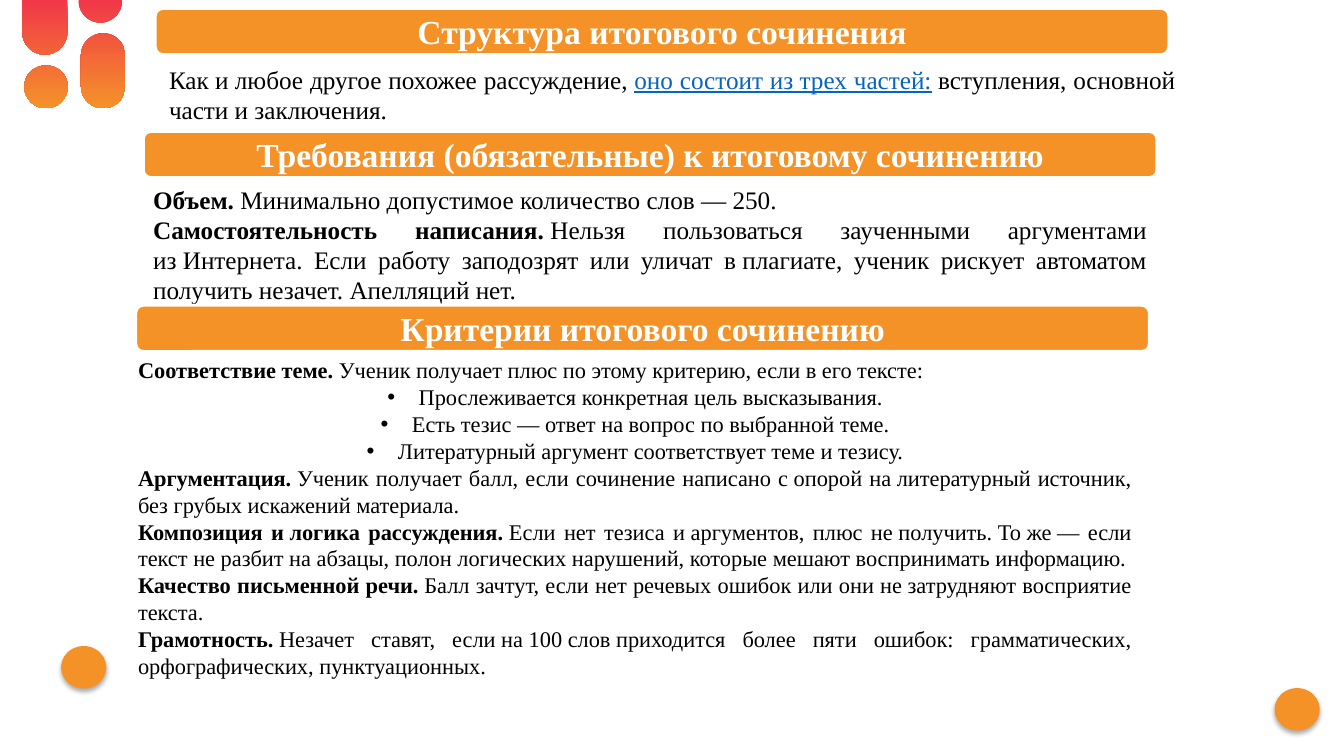
from lxml.etree import SubElement as Sub
from pptx import Presentation
from pptx.dml.color import RGBColor as Rgb
from pptx.enum.shapes import MSO_SHAPE as Kind
from pptx.enum.text import MSO_ANCHOR as Anchor, MSO_AUTO_SIZE as Auto, PP_ALIGN as Align
from pptx.oxml.ns import qn
from pptx.util import Cm, Pt

# Content: "~" ties two words with a no-break space
# Paragraphs are (layout, runs); runs are (look, text)
INTRO = [("body", [
    ("plain", "Как~и~любое другое похожее рассуждение,~"),
    ("link", "оно состоит из~трех частей:"),
    ("plain", "~вступления, основной части и~заключения."),
])]
RULES = [
    ("body", [("bold", "Объем."),
              ("plain", "~Минимально допустимое количество слов~— 250.")]),
    ("body", [("bold", "Самостоятельность написания."),
              ("plain", "~Нельзя пользоваться заученными аргументами из~Интернета. "
                        "Если работу заподозрят или уличат в~плагиате, ученик рискует "
                        "автоматом получить незачет. Апелляций нет.")]),
]
MARKS = [
    ("body", [("bold", "Соответствие теме."),
              ("plain", "~Ученик получает плюс по~этому критерию, если в~его тексте:")]),
    ("item", [("plain", "Прослеживается конкретная цель высказывания.")]),
    ("item", [("plain", "Есть тезис~— ответ на~вопрос по~выбранной теме.")]),
    ("item", [("plain", "Литературный аргумент соответствует теме и~тезису.")]),
    ("body", [("bold", "Аргументация."),
              ("plain", "~Ученик получает балл, если сочинение написано с~опорой "
                        "на~литературный источник, без~грубых искажений материала. ")]),
    ("body", [("bold", "Композиция и~логика рассуждения."),
              ("plain", "~Если нет тезиса и~аргументов, плюс не~получить.~То~же~— если "
                        "текст не~разбит на~абзацы, полон логических нарушений, "
                        "которые мешают воспринимать информацию.")]),
    ("body", [("bold", "Качество письменной речи."),
              ("plain", "~Балл зачтут, если нет речевых ошибок или они "
                        "не~затрудняют восприятие текста. ")]),
    ("body", [("bold", "Грамотность."),
              ("plain", "~Незачет ставят, если~на~100~слов~приходится более пяти ошибок: "
                        "грамматических, орфографических, пунктуационных. ")]),
]

# Text boxes: (left, top, width, height, size, paragraphs)
# Heading bars: (left, top, text)
PARTS = [
    (4.01, 1.49, 25.86, 1.8, 18, INTRO),
    (3.91, 0.21, "Структура итогового сочинения"),
    (3.61, 3.31, "Требования (обязательные) к итоговому сочинению"),
    (3.61, 4.51, 25.55, 3.33, 18, RULES),
    (3.42, 7.69, "Критерии итогового сочинению"),
    (3.23, 8.86, 25.55, 8.46, 16, MARKS),
]

# Pills: (left, top, width, bottom, round top)
PILLS = [
    (0.61, 1.65, 1.1, 2.73, True),
    (2.04, 0.84, 1.12, 2.73, True),
    (1.98, 0, 1.1, 0.57, False),
    (0.56, 0, 1.14, 1.38, False),
]
DOTS = [(32.12, 17.34), (1.54, 16.28)]

HUES = {"bar": "F49228", "top": "F13749", "text": "000000",
        "link": "0563C1", "pale": "FFFFFF"}
FACE = "Times New Roman"
LOOKS = {
    "plain": ("text", {"bold": False}),
    "bold": ("text", {"bold": True}),
    "link": ("link", {"bold": False, "underline": True}),
    "head": ("pale", {"bold": True}),
}
BEND = 0.55


def hue(name):
    return Rgb.from_string(HUES[name])


def put(target, values):
    for key, value in values.items():
        setattr(target, key, value)


def write(para, runs, size):
    for look, text in runs:
        run = para.add_run()
        run.text = text.replace("~", chr(160))
        tint, style = LOOKS[look]
        put(run.font, {"name": FACE, "size": Pt(size), **style})
        run.font.color.rgb = hue(tint)


def bullet(para):
    props = para._p.get_or_add_pPr()
    props.set("marL", str(Cm(0.79)))
    props.set("indent", str(-Cm(0.79)))
    Sub(props, qn("a:buFont"), typeface="Arial")
    Sub(props, qn("a:buChar"), char="•")


def outline(left, top, wide, base, round_top):
    """Start point and steps: one point is a line, three are a curve."""
    rad = wide / 2
    mid, right = left + rad, left + wide
    pull = rad * BEND
    low = max(base - rad, top)
    drop = (base - low) * BEND
    high = min(top + rad, low) if round_top else top
    rise = (high - top) * BEND
    crown = [
        [(left, high - rise), (mid - pull, top), (mid, top)],
        [(mid + pull, top), (right, high - rise), (right, high)],
    ] if round_top else [[(right, top)]]
    return (left, high), crown + [
        [(right, low)],
        [(right, low + drop), (mid + pull, base), (mid, base)],
        [(mid - pull, base), (left, low + drop), (left, low)],
    ]


def spots(points):
    return [(Cm(x), Cm(y)) for x, y in points]


def bend(shape, steps):
    """Join the three lines of each curved step into one curve."""
    lines = iter(list(shape._element.iter(qn("a:lnTo"))))
    for step in steps:
        first, *rest = [next(lines) for _ in step]
        if rest:
            first.tag = qn("a:cubicBezTo")
            for line in rest:
                first.append(line[0])
                line.getparent().remove(line)


def add_bar(left, top, text):
    bar = shapes.add_shape(Kind.ROUNDED_RECTANGLE, Cm(left), Cm(top), Cm(25.55), Cm(1.17))
    bar.shadow.inherit = False
    bar.fill.solid()
    bar.fill.fore_color.rgb = hue("bar")
    bar.line.color.rgb = hue("pale")
    bar.line.width = Pt(2.25)
    put(bar.text_frame, {"word_wrap": True, "vertical_anchor": Anchor.MIDDLE})
    para = bar.text_frame.paragraphs[0]
    para.alignment = Align.CENTER
    write(para, [("head", text)], 24)


def add_box(left, top, wide, high, size, paras):
    frame = shapes.add_textbox(Cm(left), Cm(top), Cm(wide), Cm(high)).text_frame
    put(frame, {"word_wrap": True, "auto_size": Auto.SHAPE_TO_FIT_TEXT})
    for index, (layout, runs) in enumerate(paras):
        para = frame.add_paragraph() if index else frame.paragraphs[0]
        para.alignment = Align.CENTER if layout == "item" else Align.JUSTIFY
        if layout == "item":
            bullet(para)
        write(para, runs, size)


deck = Presentation()
put(deck, {"slide_width": Cm(33.87), "slide_height": Cm(19.05)})
shapes = deck.slides.add_slide(deck.slide_layouts[6]).shapes

# Corner pills, one outline under one gradient
loops = [outline(*pill) for pill in PILLS]
pen = shapes.build_freeform(*spots([loops[0][0]])[0])
for index, (start, steps) in enumerate(loops):
    if index:
        pen.move_to(*spots([start])[0])
    pen.add_line_segments(spots(sum(steps, [])), close=True)
corner = pen.convert_to_shape()
bend(corner, [step for _, steps in loops for step in steps])
corner.shadow.inherit = False
corner.line.fill.background()
corner.fill.gradient()
corner.fill.gradient_angle = 270
for stop, name, spot in zip(corner.fill.gradient_stops, ("top", "bar"), (0, 1)):
    stop.color.rgb = hue(name)
    stop.position = spot

# Dots with a soft shadow
for left, top in DOTS:
    dot = shapes.add_shape(Kind.OVAL, Cm(left), Cm(top), Cm(1.14), Cm(1.07))
    dot.fill.solid()
    dot.fill.fore_color.rgb = hue("bar")
    dot.line.fill.background()
    dot.shadow.inherit = False
    glow = Sub(dot._element.spPr.find(qn("a:effectLst")), qn("a:outerShdw"),
               blurRad=str(Pt(3.5)), dist=str(Pt(2.2)), dir="5400000", rotWithShape="0")
    shade = Sub(glow, qn("a:srgbClr"), val=HUES["text"])
    Sub(shade, qn("a:alpha"), val="32000")

# Heading bars and text boxes, back to front
for part in PARTS:
    (add_bar if len(part) == 3 else add_box)(*part)

deck.save("out.pptx")
